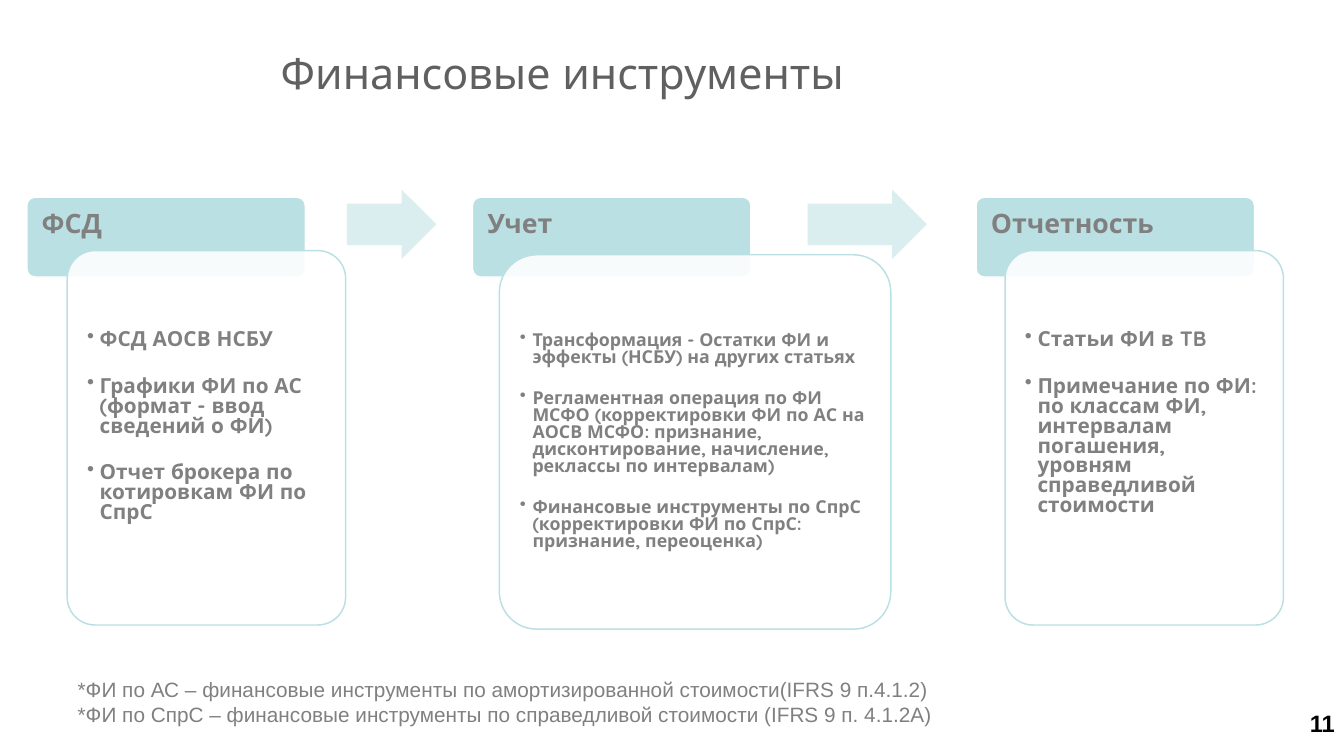
"""Build the slide on how financial instruments flow from data to reporting."""
from dataclasses import dataclass

import pptx
import pptx.dml.color
import pptx.enum.shapes
import pptx.enum.text
import pptx.oxml
import pptx.oxml.ns
import pptx.shapes.autoshape
import pptx.slide
import pptx.text.text
import pptx.util
from pptx.util import Cm, Pt

RGBColor = pptx.dml.color.RGBColor
MSO_SHAPE = pptx.enum.shapes.MSO_SHAPE
MSO_ANCHOR = pptx.enum.text.MSO_ANCHOR
PP_ALIGN = pptx.enum.text.PP_ALIGN

TEAL = RGBColor(0xBB, 0xE0, 0xE3)
PALE_TEAL = RGBColor(0xDA, 0xED, 0xEF)
WHITE = RGBColor(0xFF, 0xFF, 0xFF)
GREY = RGBColor(0x80, 0x80, 0x80)
DARK_GREY = RGBColor(0x60, 0x60, 0x60)
BLACK = RGBColor(0, 0, 0)

HEADING_FONT = "Quicksand"
NOTE_FONT = "Arial"
STAGE_WIDTH = 6.63
STAGE_SPACING = 0.8
BULLET_INDENT = Cm(0.3)


@dataclass(frozen=True)
class Stage:
    """A process stage: a header and the detail card over it."""
    title: str
    header_left: float
    card_left: float
    points: tuple[str, ...]
    card_top: float = 5.97
    card_width: float = STAGE_WIDTH
    inset: float = 0.28
    top_inset: float = 1.92
    anchor: MSO_ANCHOR = MSO_ANCHOR.TOP
    size: int = 14
    gap: int = 18


@dataclass(frozen=True)
class Arrow:
    """An arrow between two stages."""
    left: float
    width: float


@dataclass(frozen=True)
class Caption:
    """A free-standing text."""
    lines: tuple[str, ...]
    left: float
    top: float
    width: float
    height: float
    font: str
    size: int
    color: RGBColor
    bold: bool = False
    align: PP_ALIGN = PP_ALIGN.LEFT
    anchor: MSO_ANCHOR = MSO_ANCHOR.TOP


STAGES = (
    Stage("ФСД", 0.64, 1.6, (
        "ФСД АОСВ НСБУ",
        "Графики ФИ по АС (формат - ввод сведений о ФИ)",
        "Отчет брокера по котировкам ФИ по СпрС",
    )),
    Stage("Учет", 11.25, 11.89, (
        "Трансформация - Остатки ФИ и эффекты (НСБУ) на других статьях",
        "Регламентная операция по ФИ МСФО (корректировки ФИ по АС на АОСВ МСФО: "
        "признание, дисконтирование, начисление, реклассы по интервалам)",
        "Финансовые инструменты по СпрС (корректировки ФИ по СпрС: "
        "признание, переоценка)",
    ), card_top=6.07, card_width=9.32, inset=0.23, top_inset=0.23,
        anchor=MSO_ANCHOR.MIDDLE, size=12, gap=16),
    Stage("Отчетность", 23.24, 23.93, (
        "Статьи ФИ в TB",
        "Примечание по ФИ: по классам ФИ, интервалам погашения, "
        "уровням справедливой стоимости",
    )),
)
ARROWS = (Arrow(8.26, 2.13), Arrow(19.23, 2.84))
CAPTIONS = (
    Caption(("11",), 29.46, 16.76, 2.57, 1, NOTE_FONT, 16, BLACK,
            bold=True, align=PP_ALIGN.RIGHT),
    Caption(("Финансовые инструменты",), 6.43, 0.3, 19.18, 2.84,
            HEADING_FONT, 29, DARK_GREY, anchor=MSO_ANCHOR.MIDDLE),
    Caption((
        "*ФИ по АС – финансовые инструменты по амортизированной стоимости(IFRS 9 п.4.1.2)",
        "*ФИ по СпрС – финансовые инструменты по справедливой стоимости (IFRS 9 п. 4.1.2А)",
    ), 1.6, 16, 22, 1.45, NOTE_FONT, 14, GREY),
)


def add_run(paragraph: pptx.text.text._Paragraph, text: str, font: str,
            size: int, color: RGBColor, bold: bool) -> None:
    """Append one styled run."""
    run = paragraph.add_run()
    run.text = text
    run.font.name = font
    run.font.size = Pt(size)
    run.font.color.rgb = color
    run.font.bold = bold


def add_block(slide: pptx.slide.Slide, kind: MSO_SHAPE, left: float, top: float,
              width: float, height: float, fill: RGBColor,
              line: RGBColor | None, adjustments: tuple[float, ...],
              ) -> pptx.shapes.autoshape.Shape:
    """Draw a filled preset shape without shadow."""
    block = slide.shapes.add_shape(kind, Cm(left), Cm(top), Cm(width), Cm(height))
    block.shadow.inherit = False
    block.fill.solid()
    block.fill.fore_color.rgb = fill
    if line is None:
        block.line.fill.background()
    else:
        block.line.color.rgb = line
        block.line.width = Pt(1)
    for index, value in enumerate(adjustments):
        block.adjustments[index] = value
    return block


def set_frame(frame: pptx.text.text.TextFrame, side: float, top: float,
              bottom: float, anchor: MSO_ANCHOR) -> None:
    """Set wrapping, insets and anchor of a text frame."""
    frame.word_wrap = True
    frame.margin_left = frame.margin_right = Cm(side)
    frame.margin_top, frame.margin_bottom = Cm(top), Cm(bottom)
    frame.vertical_anchor = anchor


def add_bullet(paragraph: pptx.text.text._Paragraph) -> None:
    """Give a paragraph a hanging bullet."""
    properties = paragraph._p.get_or_add_pPr()
    properties.set("marL", str(BULLET_INDENT))
    properties.set("indent", str(-BULLET_INDENT))
    bullet = pptx.oxml.parse_xml(
        f'<a:buChar {pptx.oxml.ns.nsdecls("a")} char="•"/>')
    properties.append(bullet)


def draw_stage(slide: pptx.slide.Slide, stage: Stage) -> None:
    """Draw a stage header and its card of points."""
    header = add_block(slide, MSO_SHAPE.ROUNDED_RECTANGLE, stage.header_left, 4.7,
                       STAGE_WIDTH, 1.9, TEAL, WHITE, (0.1,))
    set_frame(header.text_frame, 0.3, 0.32, 0.18, MSO_ANCHOR.TOP)
    title = header.text_frame.paragraphs[0]
    title.alignment = PP_ALIGN.LEFT
    title.line_spacing = STAGE_SPACING
    add_run(title, stage.title, HEADING_FONT, 18, GREY, True)

    card = add_block(slide, MSO_SHAPE.ROUNDED_RECTANGLE, stage.card_left,
                     stage.card_top, stage.card_width, 8.92, WHITE, TEAL, (0.1,))
    white = card.fill._xPr.find(".//" + pptx.oxml.ns.qn("a:srgbClr"))
    white.append(pptx.oxml.parse_xml(
        f'<a:alpha {pptx.oxml.ns.nsdecls("a")} val="90000"/>'))
    frame = card.text_frame
    set_frame(frame, stage.inset, stage.top_inset - (0.2 if stage.anchor == MSO_ANCHOR.TOP else 0),
              stage.inset, stage.anchor)
    for index, text in enumerate(stage.points):
        point = frame.add_paragraph() if index else frame.paragraphs[0]
        point.alignment = PP_ALIGN.LEFT
        point.line_spacing = STAGE_SPACING
        if index:
            point.space_before = Pt(stage.gap)
        add_bullet(point)
        add_run(point, text, HEADING_FONT, stage.size, GREY, True)


def draw_caption(slide: pptx.slide.Slide, caption: Caption) -> None:
    """Draw a text with one paragraph per line."""
    frame = slide.shapes.add_textbox(Cm(caption.left), Cm(caption.top), Cm(caption.width),
                                     Cm(caption.height)).text_frame
    set_frame(frame, 0.25, 0.13, 0.13, caption.anchor)
    for index, text in enumerate(caption.lines):
        line = frame.add_paragraph() if index else frame.paragraphs[0]
        line.alignment = caption.align
        add_run(line, text, caption.font, caption.size, caption.color, caption.bold)


def main() -> None:
    """Build and save the slide."""
    presentation = pptx.Presentation()
    presentation.slide_width, presentation.slide_height = Cm(32), Cm(18.01)
    slide = presentation.slides.add_slide(presentation.slide_layouts[6])
    for stage in STAGES:
        draw_stage(slide, stage)
    for arrow in ARROWS:
        add_block(slide, MSO_SHAPE.RIGHT_ARROW, arrow.left, 4.52, arrow.width, 1.65,
                  PALE_TEAL, None, (0.6, 0.5))
    for caption in CAPTIONS:
        draw_caption(slide, caption)
    presentation.save("out.pptx")


if __name__ == "__main__":
    main()
